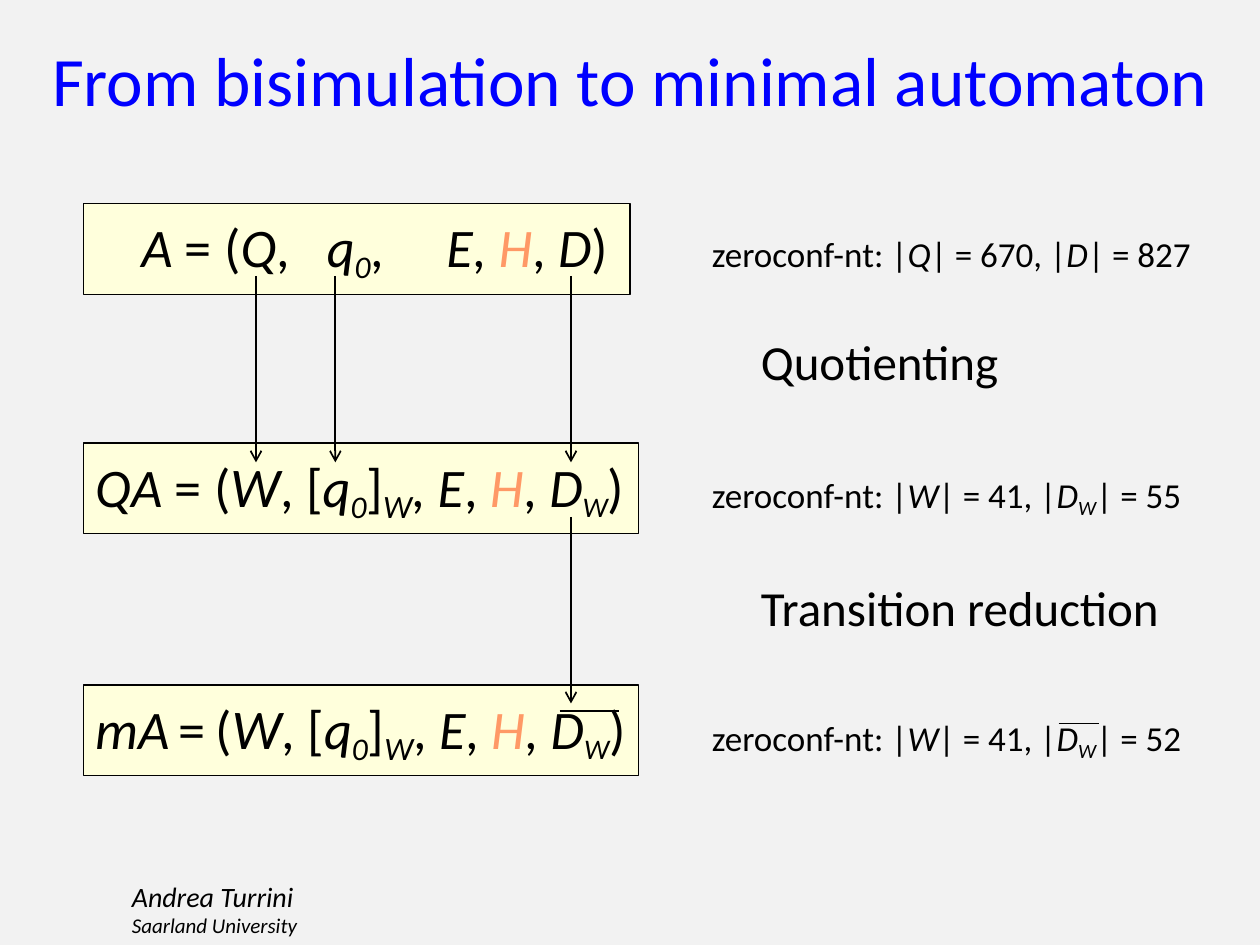
from lxml.etree import SubElement
from pptx import Presentation
from pptx.dml.color import RGBColor
from pptx.enum.shapes import MSO_CONNECTOR, MSO_SHAPE
from pptx.enum.text import MSO_ANCHOR, PP_ALIGN
from pptx.oxml.ns import qn
from pptx.util import Cm, Pt

FONT = "Calibri"
COLORS = {
    "background": "F2F2F2",
    "title": "0000FF",
    "text": "000000",
    "box": "FFFFDC",
    "hidden": "FF9966",
}
TITLE = "From bisimulation to minimal automaton"

PLAIN, ITALIC, SUB, HIDDEN = "plain", "italic", "sub", "hidden"
ACTIONS = [("E", ITALIC), (", ", PLAIN), ("H", HIDDEN), (", ", PLAIN), ("D", ITALIC)]
CLASSES = [
    ("W", ITALIC, 32), (", [", PLAIN), ("q", ITALIC), ("0", SUB), ("]", PLAIN),
    ("W", SUB, 32), (", ", PLAIN), *ACTIONS, ("W", SUB, 28), (")", PLAIN),
]
FORMULAS = [
    {"top": 4.11, "width": 11.02, "inset": 1.17, "tabs": [3.74, 6.15],
     "runs": [("A ", ITALIC), ("= (", PLAIN), ("Q", ITALIC), (",\t", PLAIN),
              ("q", ITALIC), ("0", SUB), (",\t", PLAIN), *ACTIONS, (")", PLAIN)]},
    {"top": 8.93, "width": 11.2, "inset": 0.24, "tabs": [],
     "runs": [("QA ", ITALIC), ("= (", PLAIN), *CLASSES]},
    {"top": 13.81, "width": 11.2, "inset": 0.24, "tabs": [],
     "runs": [("mA", ITALIC), (" ", PLAIN, 24), ("=", PLAIN), (" ", PLAIN, 24),
              ("(", PLAIN), *CLASSES]},
]
FORMULA_LEFT, FORMULA_HEIGHT, FORMULA_SIZE = 1.68, 1.83, 31

REDUCED = [("zeroconf-nt: |", PLAIN), ("W", ITALIC), ("| = 41, |", PLAIN),
           ("D", ITALIC), ("W", SUB)]
LABELS = [
    (15.09, 6.55, 5.36, 1.45, 28, [("Quotienting", PLAIN)]),
    (15.09, 11.51, 8.64, 1.45, 28, [("Transition reduction", PLAIN)]),
    (14.1, 4.57, 10.26, 1.12, 20,
     [("zeroconf-nt: |", PLAIN), ("Q", ITALIC), ("| = 670, |", PLAIN),
      ("D", ITALIC), ("| = 827", PLAIN)]),
    (14.1, 9.42, 10.29, 1.12, 20, [*REDUCED, ("| = 55", PLAIN)]),
    (14.1, 14.32, 10.29, 1.12, 20, [*REDUCED, ("| = 52", PLAIN)]),
]
AUTHOR = [("Andrea Turrini", 16), ("Saarland University", 12)]

ARROWS = [(5.16, 5.56), (6.76, 5.56), (11.51, 5.56), (11.51, 10.42)]
ARROW_LENGTH = 3.76
OVERLINES = [(11.28, 14.33, 1.19), (21.34, 14.58, 0.81)]


def color(name):
    return RGBColor.from_string(COLORS[name])


def write_runs(paragraph, runs, base_size):
    for text, style, *size in runs:
        run = paragraph.add_run()
        run.text = text
        run.font.name = FONT
        run.font.size = Pt(size[0] if size else base_size)
        run.font.italic = style != PLAIN
        run.font.color.rgb = color("hidden" if style == HIDDEN else "text")
        if style == SUB:
            run._r.get_or_add_rPr().set("baseline", "-20000")


def add_tabs(paragraph, stops):
    if stops:
        tab_list = SubElement(paragraph._p.get_or_add_pPr(), qn("a:tabLst"))
        for stop in stops:
            SubElement(tab_list, qn("a:tab"), pos=str(int(Cm(stop))), algn="l")


def add_formula(slide, formula):
    shape = slide.shapes.add_shape(
        MSO_SHAPE.RECTANGLE, Cm(FORMULA_LEFT), Cm(formula["top"]),
        Cm(formula["width"]), Cm(FORMULA_HEIGHT))
    shape.shadow.inherit = False
    shape.fill.solid()
    shape.fill.fore_color.rgb = color("box")
    shape.line.color.rgb = color("text")
    shape.line.width = Pt(0.75)
    frame = shape.text_frame
    frame.word_wrap = True
    frame.vertical_anchor = MSO_ANCHOR.MIDDLE
    frame.margin_left, frame.margin_right = Cm(formula["inset"]), 0
    paragraph = frame.paragraphs[0]
    paragraph.alignment = PP_ALIGN.LEFT
    add_tabs(paragraph, formula["tabs"])
    write_runs(paragraph, formula["runs"], FORMULA_SIZE)


def add_text(slide, left, top, width, height):
    frame = slide.shapes.add_textbox(Cm(left), Cm(top), Cm(width), Cm(height)).text_frame
    frame.word_wrap = False
    return frame


def add_line(slide, left, top, width, height, weight, arrow=False):
    connector = slide.shapes.add_connector(
        MSO_CONNECTOR.STRAIGHT, Cm(left), Cm(top), Cm(left + width), Cm(top + height))
    connector.line.color.rgb = color("text")
    connector.line.width = Pt(weight)
    properties = connector._element.spPr
    if arrow:
        SubElement(properties.find(qn("a:ln")), qn("a:tailEnd"), type="arrow")
    SubElement(properties, qn("a:effectLst"))


def main():
    presentation = Presentation()
    presentation.slide_width, presentation.slide_height = Cm(25.4), Cm(19.05)
    slide = presentation.slides.add_slide(presentation.slide_layouts[5])
    slide.background.fill.solid()
    slide.background.fill.fore_color.rgb = color("background")

    title = slide.shapes.title
    title.left, title.top, title.width, title.height = 0, 0, Cm(25.4), Cm(3.18)
    title.text_frame.text = TITLE
    title.text_frame.vertical_anchor = MSO_ANCHOR.MIDDLE
    paragraph = title.text_frame.paragraphs[0]
    paragraph.alignment = PP_ALIGN.CENTER
    font = paragraph.runs[0].font
    font.name, font.size = FONT, Pt(39.6)
    font.color.rgb = color("title")

    for formula in FORMULAS:
        add_formula(slide, formula)
    for left, top in ARROWS:
        add_line(slide, left, top, 0, ARROW_LENGTH, 1, arrow=True)
    for left, top, width in OVERLINES:
        add_line(slide, left, top, width, 0, 0.75)
    for left, top, width, height, size, runs in LABELS:
        write_runs(add_text(slide, left, top, width, height).paragraphs[0], runs, size)

    frame = add_text(slide, 2.41, 17.6, 3.86, 1.45)
    frame.text = "\n".join(text for text, size in AUTHOR)
    for paragraph, (text, size) in zip(frame.paragraphs, AUTHOR):
        font = paragraph.runs[0].font
        font.name, font.size, font.italic = FONT, Pt(size), True
        font.color.rgb = color("text")

    presentation.save("out.pptx")


if __name__ == "__main__":
    main()
